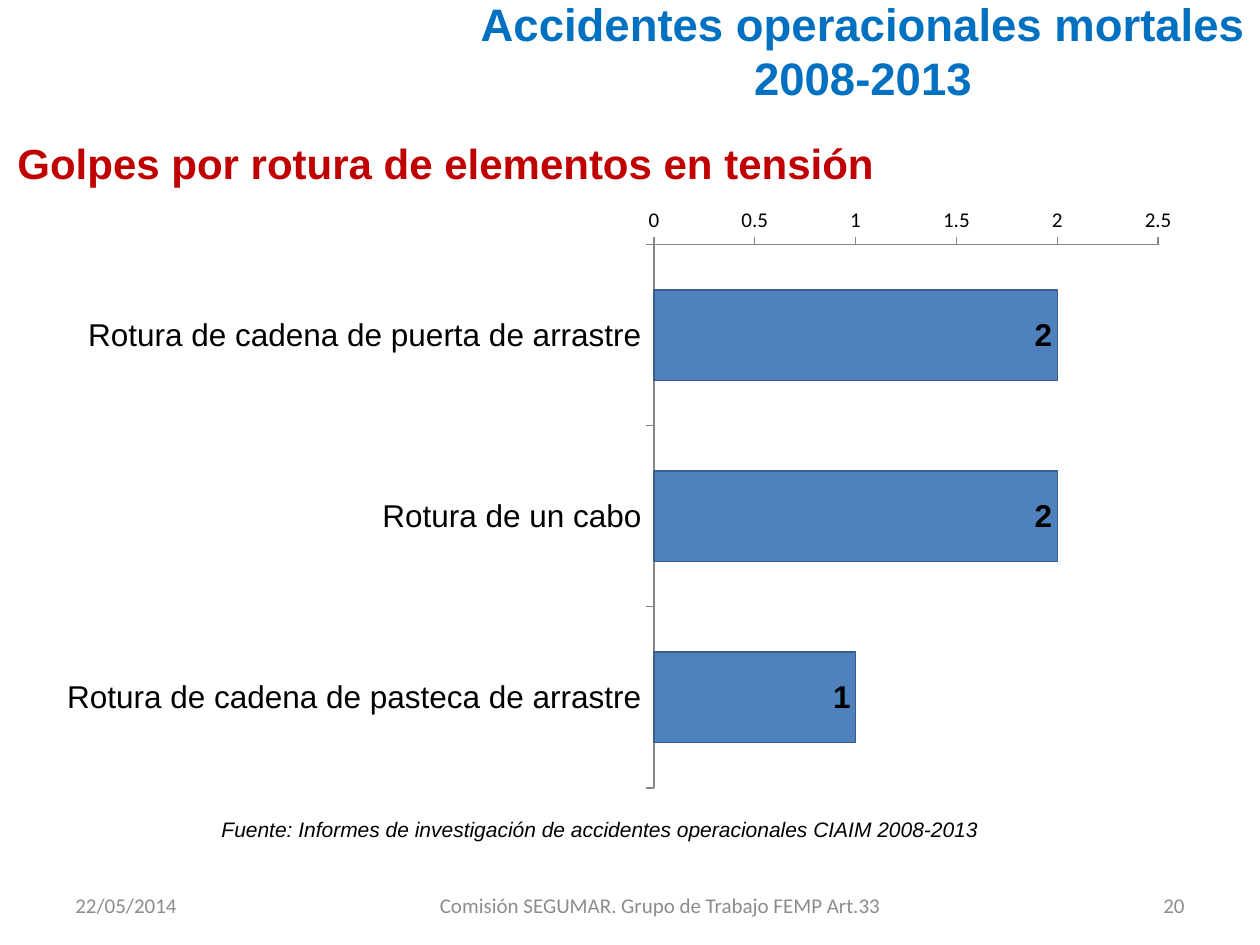
from pptx import Presentation
from pptx.chart.data import CategoryChartData
from pptx.dml.color import RGBColor
from pptx.enum import chart as charts, text
from pptx.util import Inches, Pt

BLACK = RGBColor(0x00, 0x00, 0x00)
BLUE = RGBColor(0x00, 0x70, 0xC0)
RED = RGBColor(0xC0, 0x00, 0x00)
GRAY = RGBColor(0x8C, 0x8C, 0x8C)
BAR_FILL = RGBColor(0x4F, 0x81, 0xBD)
BAR_LINE = RGBColor(0x38, 0x5D, 0x8A)
AXIS_LINE = RGBColor(0x86, 0x86, 0x86)
LEFT, CENTER, RIGHT = text.PP_ALIGN.LEFT, text.PP_ALIGN.CENTER, text.PP_ALIGN.RIGHT
TOP, MIDDLE = text.MSO_ANCHOR.TOP, text.MSO_ANCHOR.MIDDLE


def format_font(font, color, **values):
    font.color.rgb = color
    for name, value in values.items():
        setattr(font, name, value)


def write_text(shape, lines, alignment, anchor, color, **font_values):
    """Fill a shape with one formatted paragraph per line."""
    frame = shape.text_frame
    frame.text = "\n".join(lines)
    frame.word_wrap = True
    frame.auto_size = text.MSO_AUTO_SIZE.NONE
    frame.vertical_anchor = anchor
    for paragraph in frame.paragraphs:
        paragraph.alignment = alignment
        paragraph.space_before = Pt(0)
        format_font(paragraph.font, color, **font_values)


presentation = Presentation()
presentation.slide_width = Inches(10)
presentation.slide_height = Inches(7.5)
slide = presentation.slides.add_slide(presentation.slide_layouts[5])

# Title
title = slide.shapes.title
title.left, title.top = Inches(3.66), Inches(-0.11)
title.width, title.height = Inches(6.38), Inches(1.02)
write_text(title, ["Accidentes operacionales mortales", "2008-2013"], CENTER, MIDDLE,
           BLUE, name="Arial", size=Pt(26), bold=True)

# Subtitle, source and footer
heading = {"name": "Arial", "size": Pt(24), "bold": True}
source = {"name": "Arial", "size": Pt(12), "italic": True}
footer = {"name": "Calibri", "size": Pt(12)}
text_boxes = [
    ("Golpes por rotura de elementos en tensión",
     (0.04, 1.04, 9.95, 0.5), LEFT, TOP, RED, heading),
    ("Fuente: Informes de investigación de accidentes operacionales CIAIM 2008-2013",
     (1.66, 6.43, 6.6, 0.3), LEFT, TOP, BLACK, source),
    ("22/05/2014", (0.5, 6.98, 2.33, 0.4), LEFT, MIDDLE, GRAY, footer),
    ("Comisión SEGUMAR. Grupo de Trabajo FEMP Art.33",
     (3.27, 6.98, 3.94, 0.4), CENTER, MIDDLE, GRAY, footer),
    ("20", (8.23, 6.98, 1.27, 0.4), RIGHT, MIDDLE, GRAY, footer),
]
for line, place, alignment, anchor, color, font_values in text_boxes:
    box = slide.shapes.add_textbox(*map(Inches, place))
    write_text(box, [line], alignment, anchor, color, **font_values)

# Accident chart
data = CategoryChartData()
data.categories = [
    "Rotura de cadena de puerta de arrastre",
    "Rotura de un cabo",
    "Rotura de cadena de pasteca de arrastre",
]
data.add_series("Series 1", (2, 2, 1))
chart = slide.shapes.add_chart(
    charts.XL_CHART_TYPE.BAR_STACKED,
    Inches(0.35), Inches(1.55), Inches(9.13), Inches(4.8), data).chart
chart.has_legend = False
chart.has_title = False
format_font(chart.font, BLACK, name="Calibri", size=Pt(10))

chart.category_axis.reverse_order = True
chart.value_axis.minimum_scale = 0
chart.value_axis.maximum_scale = 2.5
chart.value_axis.major_unit = 0.5
axis_fonts = [
    (chart.category_axis, {"name": "Arial", "size": Pt(18)}),
    (chart.value_axis, {"name": "Calibri", "size": Pt(12)}),
]
for axis, font_values in axis_fonts:
    axis.has_major_gridlines = False
    axis.major_tick_mark = charts.XL_TICK_MARK.OUTSIDE
    axis.minor_tick_mark = charts.XL_TICK_MARK.NONE
    axis.format.line.color.rgb = AXIS_LINE
    axis.format.line.width = Pt(0.75)
    format_font(axis.tick_labels.font, BLACK, **font_values)

plot = chart.plots[0]
plot.gap_width = 100
plot.overlap = 100
plot.vary_by_categories = False
bars = plot.series[0]
bars.format.fill.solid()
bars.format.fill.fore_color.rgb = BAR_FILL
bars.format.line.color.rgb = BAR_LINE
bars.format.line.width = Pt(0.75)
labels = bars.data_labels
labels.show_value = True
labels.position = charts.XL_LABEL_POSITION.INSIDE_END
format_font(labels.font, BLACK, name="Arial", size=Pt(18), bold=True)

presentation.save("out.pptx")
